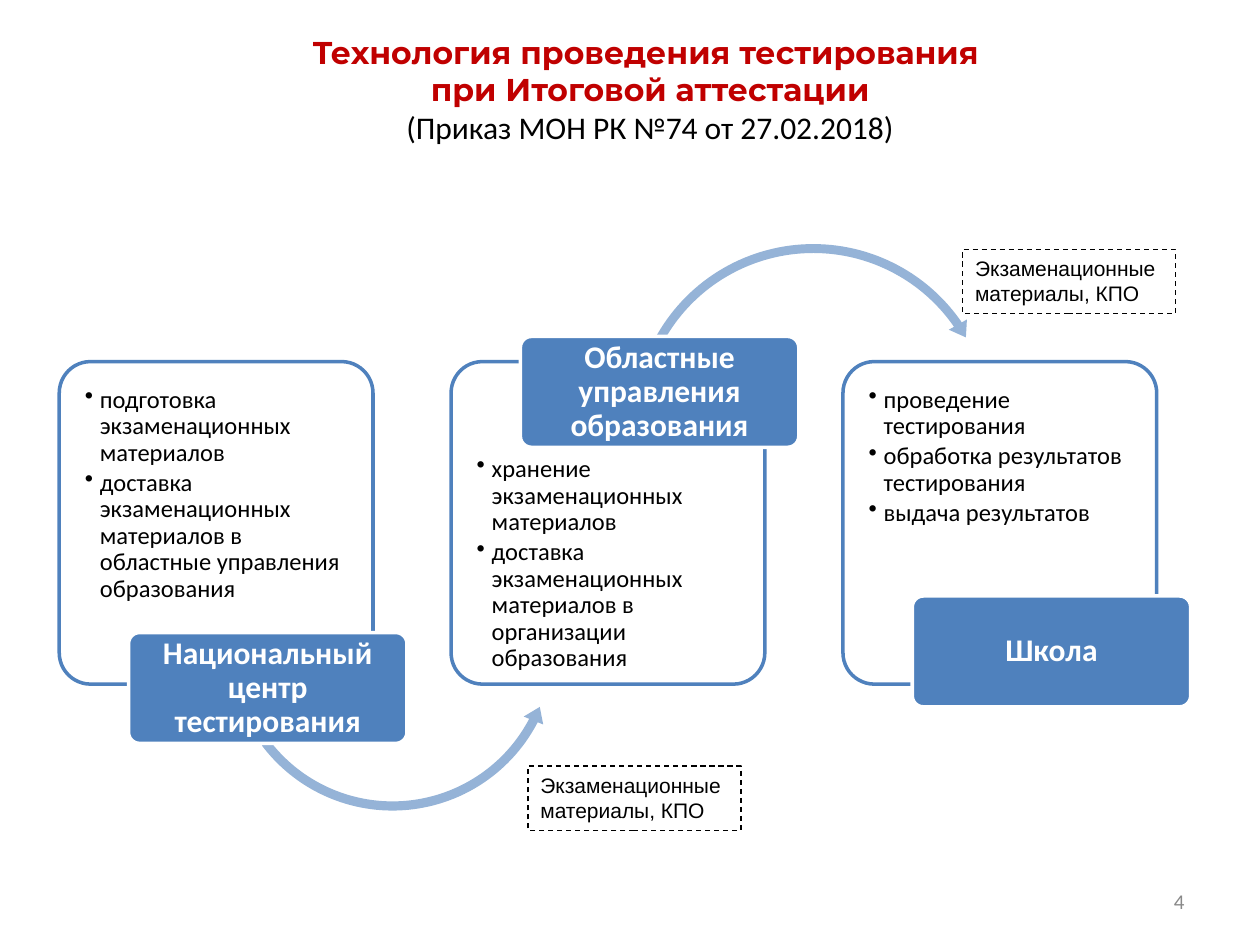
from lxml.etree import SubElement
from pptx import Presentation
from pptx.dml.color import RGBColor
from pptx.enum.dml import MSO_LINE
from pptx.enum.shapes import MSO_SHAPE
from pptx.enum.text import MSO_ANCHOR, MSO_AUTO_SIZE, PP_ALIGN
from pptx.oxml.ns import qn
from pptx.util import Inches, Pt

COLUMNS, ROWS = 100, 75
UNIT = Inches(0.1)
PANEL_WIDTH, PANEL_HEIGHT = 24.9, 25.6
LABEL_WIDTH, LABEL_HEIGHT = 22.1, 8.8
PITCH = 31.1
BLUE, PALE_BLUE, WHITE, BLACK = "4F81BD", "95B3D7", "FFFFFF", "000000"


def color(value):
    return RGBColor.from_string(value)


def place(box):
    return [round(length * UNIT) for length in box]


def add_shape(slide, kind, box, fill=None, line=None, width=2):
    shape = slide.shapes.add_shape(kind, *place(box))
    shape.shadow.inherit = False
    if fill:
        shape.fill.solid()
        shape.fill.fore_color.rgb = color(fill)
    else:
        shape.fill.background()
    if line:
        shape.line.color.rgb = color(line)
        shape.line.width = Pt(width)
    else:
        shape.line.fill.background()
    return shape


def set_margins(frame, horizontal, top, bottom):
    frame.margin_left = frame.margin_right = Inches(horizontal)
    frame.margin_top, frame.margin_bottom = Inches(top), Inches(bottom)


def write(frame, lines, size, font="Calibri", ink=BLACK, bold=False,
          align=PP_ALIGN.LEFT, anchor=MSO_ANCHOR.TOP, wrap=True):
    frame.word_wrap = wrap
    frame.vertical_anchor = anchor
    for index, line in enumerate(lines):
        paragraph = frame.add_paragraph() if index else frame.paragraphs[0]
        paragraph.text = line
        paragraph.alignment = align
        paragraph.font.size = Pt(size)
        paragraph.font.name = font
        paragraph.font.bold = bold
        paragraph.font.color.rgb = color(ink)


def add_bullet(paragraph):
    paragraph.line_spacing = 0.9
    paragraph.space_after = Pt(2.1)
    properties = paragraph._p.get_or_add_pPr()
    properties.set("marL", str(Inches(0.12)))
    properties.set("indent", str(-Inches(0.12)))
    SubElement(properties, qn("a:buChar")).set("char", "•")


def add_title(slide, box):
    frame = slide.shapes.add_textbox(*place(box)).text_frame
    write(frame, ["Технология проведения тестирования ", "при Итоговой аттестации",
                  "(Приказ МОН РК №74 от 27.02.2018)"],
          18, "Montserrat", "C00000", True, PP_ALIGN.CENTER)
    order = frame.paragraphs[-1].font
    order.name, order.bold = "Calibri", False
    order.color.rgb = color(BLACK)


def add_panel(slide, box, tasks, text_top):
    panel = add_shape(slide, MSO_SHAPE.ROUNDED_RECTANGLE, box, WHITE, BLUE)
    panel.adjustments[0] = 0.1
    fill = panel.fill._xPr.find(qn("a:solidFill"))
    SubElement(fill[0], qn("a:alpha")).set("val", "90000")
    write(panel.text_frame, tasks, 14)
    set_margins(panel.text_frame, 0.13, text_top, 0)
    for paragraph in panel.text_frame.paragraphs:
        add_bullet(paragraph)


def add_label(slide, box, name):
    label = add_shape(slide, MSO_SHAPE.ROUNDED_RECTANGLE, box, BLUE, WHITE)
    label.adjustments[0] = 0.1
    write(label.text_frame, [name], 18, ink=WHITE, bold=True,
          align=PP_ALIGN.CENTER, anchor=MSO_ANCHOR.MIDDLE)
    set_margins(label.text_frame, 0.04, 0.03, 0.03)
    label.text_frame.paragraphs[0].line_spacing = 0.9


def add_arc_arrow(slide, kind, box, thickness, head_angle, end, start, head):
    arrow = add_shape(slide, kind, box, PALE_BLUE)
    angles = [degrees * 0.6 for degrees in (head_angle, end, start)]
    for index, value in enumerate([thickness / 100, *angles, head / 100]):
        arrow.adjustments[index] = value


def add_stage(slide, left, top, name, tasks, label_drop, text_top=0.13, arrow=None):
    add_panel(slide, (left, top, PANEL_WIDTH, PANEL_HEIGHT), tasks, text_top)
    if arrow:
        kind, across, down, size, *geometry = arrow
        add_arc_arrow(slide, kind, (left + across, top + down, size, size), *geometry)
    add_label(slide, (left + 5.5, top + label_drop, LABEL_WIDTH, LABEL_HEIGHT), name)


def add_materials_note(slide, left, top):
    note = add_shape(slide, MSO_SHAPE.RECTANGLE, (left, top, 16.9, 5.1), None, BLACK, 0.75)
    note.line.dash_style = MSO_LINE.DASH
    write(note.text_frame, ["Экзаменационные", "материалы, КПО"], 12, "Arial", wrap=False)
    note.text_frame.auto_size = MSO_AUTO_SIZE.SHAPE_TO_FIT_TEXT


def add_page_number(slide, box):
    frame = slide.shapes.add_textbox(*place(box)).text_frame
    write(frame, ["4"], 12, ink="898989", align=PP_ALIGN.RIGHT, anchor=MSO_ANCHOR.MIDDLE)


def main():
    presentation = Presentation()
    presentation.slide_width = COLUMNS * UNIT
    presentation.slide_height = ROWS * UNIT
    slide = presentation.slides.add_slide(presentation.slide_layouts[6])
    add_title(slide, (6.4, 2.1, 90.4, 10.1))
    stages = [
        ("Национальный центр тестирования",
         ["подготовка экзаменационных материалов",
          "доставка экзаменационных материалов в областные управления образования"],
         21.5, 0.13,
         (MSO_SHAPE.LEFT_CIRCULAR_ARROW, 13, 9.2, 26.9, 2.7, 5.42, 27.54, 142.93, 3.1)),
        ("Областные управления образования",
         ["хранение экзаменационных материалов",
          "доставка экзаменационных материалов в организации образования"],
         -2, 0.68,
         (MSO_SHAPE.CIRCULAR_ARROW, 14, -9.8, 29.5, 2.4, 4.91, 325.5, 209.59, 2.8)),
        ("Школа",
         ["проведение тестирования", "обработка результатов тестирования",
          "выдача результатов"],
         18.6, 0.13, None),
    ]
    for index, stage in enumerate(stages):
        add_stage(slide, 4.7 + index * PITCH, 28.7, *stage)
    for left, top in ((41.9, 60.8), (76.4, 19.8)):
        add_materials_note(slide, left, top)
    add_page_number(slide, (71.7, 69.5, 23.3, 4))
    presentation.save("out.pptx")


if __name__ == "__main__":
    main()
